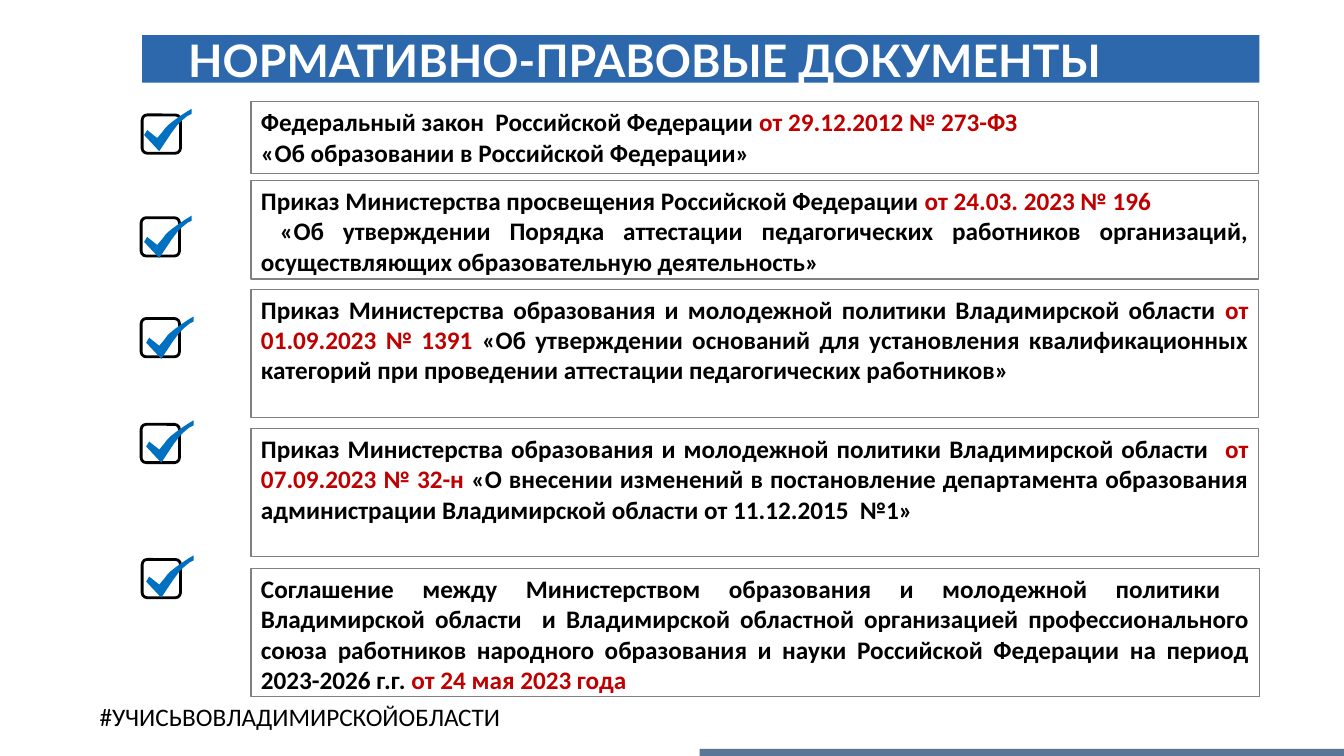
"""Build the slide that lists the regulatory documents on teacher certification."""
from dataclasses import dataclass
from typing import NamedTuple

from pptx import Presentation
from pptx.dml.color import RGBColor
from pptx.enum.shapes import MSO_SHAPE as Shape
from pptx.enum.text import MSO_ANCHOR as Anchor, MSO_AUTO_SIZE as AutoSize, PP_ALIGN as Align
from pptx.util import Pt

PX = 9144


@dataclass(frozen=True)
class Theme:
    bar: RGBColor = RGBColor.from_string("2D67AC")
    strip: RGBColor = RGBColor.from_string("597699")
    tick: RGBColor = RGBColor.from_string("0070C0")
    frame: RGBColor = RGBColor.from_string("808080")
    accent: RGBColor = RGBColor.from_string("C00000")
    black: RGBColor = RGBColor.from_string("000000")
    white: RGBColor = RGBColor.from_string("FFFFFF")
    title_font: str = "Lato"
    body_font: str = "Calibri"
    title_size: int = 32
    body_size: int = 18


class Box(NamedTuple):
    x: int
    y: int
    w: int
    h: int


class Piece(NamedTuple):
    text: str
    accent: bool = False


class Document(NamedTuple):
    box: Box
    check: tuple[int, int]
    tick: tuple[int, int]
    paragraphs: list[list[Piece]]
    align: Align = Align.JUSTIFY


THEME = Theme()
TICK = [(47, 0), (42, 3), (36, 7), (29, 12), (24, 16), (21, 19), (18, 23), (13, 29), (3, 21),
        (0, 26), (15, 42), (17, 39), (21, 33), (27, 24), (33, 16), (37, 12), (43, 7), (47, 5)]
CHECK_SIDE, CHECK_RADIUS = 38, 5

DOCUMENTS = [
    Document(Box(249, 101, 999, 71), (141, 114), (143, 108), [
        [Piece("Федеральный закон  Российской Федерации "), Piece("от 29.12.2012 № 273-ФЗ", True)],
        [Piece("«Об образовании в Российской Федерации»")],
    ], Align.LEFT),
    Document(Box(249, 179, 999, 98), (140, 216), (143, 214), [
        [Piece("Приказ Министерства просвещения Российской Федерации "),
         Piece("от 24.03. 2023 № 196", True)],
        [Piece(" «Об утверждении Порядка аттестации педагогических работников организаций, "
               "осуществляющих образовательную деятельность»")],
    ]),
    Document(Box(249, 287, 999, 127), (140, 316), (145, 314), [
        [Piece("Приказ Министерства образования и молодежной политики Владимирской области "),
         Piece("от 01.09.2023 № 1391 ", True),
         Piece("«Об утверждении оснований для установления квалификационных категорий "
               "при проведении аттестации педагогических работников»")],
    ]),
    Document(Box(249, 425, 999, 127), (140, 421), (145, 417), [
        [Piece("Приказ Министерства образования и молодежной политики Владимирской области  "),
         Piece("от 07.09.2023 № 32-н ", True),
         Piece("«О внесении изменений в постановление департамента образования "
               "администрации Владимирской области от 11.12.2015  №1»")],
    ]),
    Document(Box(249, 564, 1000, 127), (141, 555), (145, 551), [
        [Piece("Соглашение между Министерством образования и молодежной политики  "
               "Владимирской области  и Владимирской областной организацией профессионального "
               "союза работников народного образования и науки Российской Федерации "
               "на период 2023-2026 г.г. "),
         Piece("от 24 мая 2023 года", True)],
    ]),
]


def emu(box: Box) -> tuple[int, ...]:
    """Scale a box from px to EMU."""
    return tuple(v * PX for v in box)


def style_run(r, font: str, size: int, color: RGBColor, bold: bool) -> None:
    """Set the typeface, size, colour and weight of a run."""
    r.font.name, r.font.size, r.font.bold = font, Pt(size), bold
    r.font.color.rgb = color


def add_bar(s, box: Box, color: RGBColor):
    """Add a filled rectangle without an outline."""
    sp = s.shapes.add_shape(Shape.RECTANGLE, *emu(box))
    sp.shadow.inherit = False
    sp.fill.solid()
    sp.fill.fore_color.rgb = color
    sp.line.fill.background()
    return sp


def add_outline(s, kind: Shape, box: Box, color: RGBColor, width: int):
    """Add an unfilled shape with an outline."""
    sp = s.shapes.add_shape(kind, *emu(box))
    sp.shadow.inherit = False
    sp.fill.background()
    sp.line.color.rgb = color
    sp.line.width = Pt(width)
    return sp


def add_title(s, text: str) -> None:
    """Place the title placeholder over its blue bar."""
    sp = s.shapes.title
    sp.element.addprevious(add_bar(s, Box(141, 35, 1108, 47), THEME.bar).element)
    sp.left, sp.top, sp.width, sp.height = emu(Box(99, 31, 1081, 55))
    tf = sp.text_frame
    tf.text = text
    tf.word_wrap, tf.auto_size = True, AutoSize.SHAPE_TO_FIT_TEXT
    tf.vertical_anchor = Anchor.TOP
    tf.margin_left = tf.margin_right = tf.margin_bottom = 0
    tf.margin_top = PX
    p = tf.paragraphs[0]
    p.alignment, p.space_before = Align.CENTER, Pt(1)
    r = p.runs[0]
    style_run(r, THEME.title_font, THEME.title_size, THEME.white, True)
    r.font.element.set("spc", "-10") if hasattr(r.font, "element") else None


def add_checkbox(s, doc: Document) -> None:
    """Draw a rounded box with a tick over it."""
    box = Box(*doc.check, CHECK_SIDE, CHECK_SIDE)
    sp = add_outline(s, Shape.ROUNDED_RECTANGLE, box, THEME.black, 2)
    sp.adjustments[0] = CHECK_RADIUS / CHECK_SIDE
    x, y = doc.tick
    points = [(x + dx, y + dy) for dx, dy in TICK]
    builder = s.shapes.build_freeform(*points[0], scale=PX)
    builder.add_line_segments(points[1:], close=True)
    tick = builder.convert_to_shape()
    tick.shadow.inherit = False
    tick.fill.solid()
    tick.fill.fore_color.rgb = THEME.tick
    tick.line.fill.background()


def add_document(s, doc: Document) -> None:
    """Draw a framed document entry."""
    tf = add_outline(s, Shape.RECTANGLE, doc.box, THEME.frame, 1).text_frame
    tf.word_wrap, tf.auto_size = True, AutoSize.SHAPE_TO_FIT_TEXT
    tf.vertical_anchor = Anchor.TOP
    for i, pieces in enumerate(doc.paragraphs):
        p = tf.add_paragraph() if i else tf.paragraphs[0]
        p.alignment = doc.align
        for piece in pieces:
            r = p.add_run()
            r.text = piece.text
            color = THEME.accent if piece.accent else THEME.black
            style_run(r, THEME.body_font, THEME.body_size, color, True)


def add_hashtag(s, text: str) -> None:
    """Add the hashtag at the foot of the slide."""
    tf = s.shapes.add_textbox(*emu(Box(89, 691, 477, 39))).text_frame
    tf.text = text
    tf.word_wrap, tf.auto_size = False, AutoSize.SHAPE_TO_FIT_TEXT
    style_run(tf.paragraphs[0].runs[0], THEME.body_font, THEME.body_size, THEME.black, False)


def main() -> None:
    """Build and save the presentation."""
    prs = Presentation()
    prs.slide_width, prs.slide_height = 1333 * PX, 750 * PX
    s = prs.slides.add_slide(prs.slide_layouts[5])
    add_title(s, "НОРМАТИВНО-ПРАВОВЫЕ ДОКУМЕНТЫ")
    add_bar(s, Box(694, 743, 639, 9), THEME.strip)
    add_hashtag(s, "#УЧИСЬВОВЛАДИМИРСКОЙОБЛАСТИ")
    for doc in DOCUMENTS:
        add_document(s, doc)
        add_checkbox(s, doc)
    prs.save("out.pptx")


if __name__ == "__main__":
    main()
